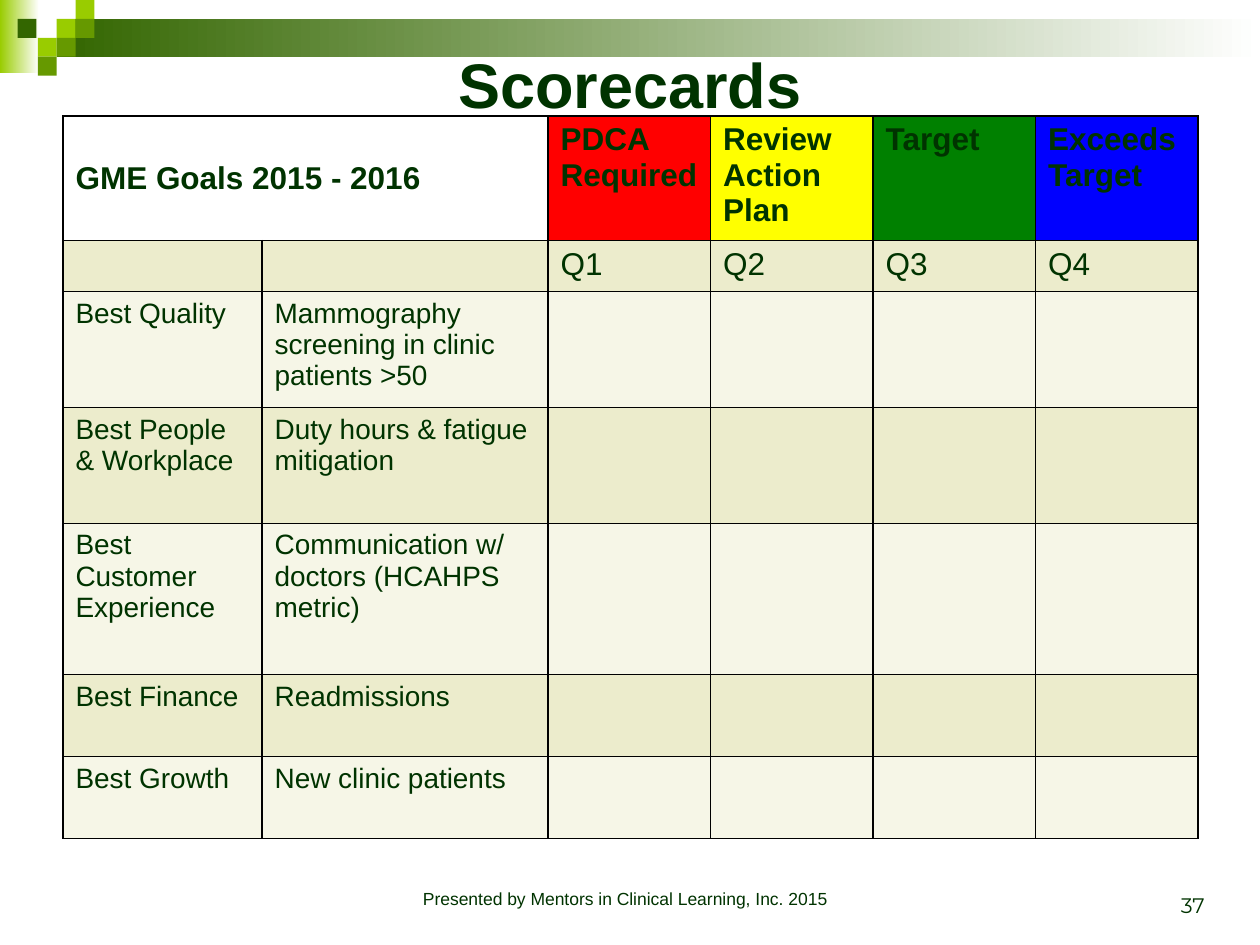
"""Build the goals scorecard slide."""
from dataclasses import dataclass

from lxml.etree import SubElement
from pptx import Presentation
from pptx.dml.color import RGBColor
from pptx.enum.shapes import MSO_SHAPE
from pptx.enum.text import MSO_ANCHOR, PP_ALIGN
from pptx.oxml.ns import qn
from pptx.util import Inches, Pt

COLORS = {
    "white": "FFFFFF", "black": "000000", "text": "003300",
    "lime": "99CC00", "leaf": "669900", "forest": "336600",
    "red": "FF0000", "yellow": "FFFF00", "green": "008000", "blue": "0000FF",
    "dark_band": "ECECCC", "light_band": "F6F6E7",
}
UNIT = 0.15
COLUMN_WIDTHS = [1.58, 2.27] + [1.29] * 4
ROW_HEIGHTS = [0.99, 0.37, 0.92, 0.92, 1.2, 0.65, 0.65]


@dataclass
class Block:
    column: float
    row: float
    width: float
    height: float
    color: str
    fades: bool = False


@dataclass
class TextStyle:
    size: int
    bold: bool = False
    font: str = "Arial"
    align: PP_ALIGN = PP_ALIGN.LEFT
    anchor: MSO_ANCHOR = MSO_ANCHOR.TOP


BLOCKS = [
    Block(0, 0, 2.07, 3.87, "lime", True),
    Block(3, 1, 63.67, 2, "forest", True),
    Block(3, 1, 1, 1, "lime"),
    Block(4, 0, 1, 1, "lime"),
    Block(4, 1, 1, 1, "leaf"),
    Block(2, 2, 1, 1, "lime"),
    Block(0.93, 1, 1, 1, "forest"),
    Block(3, 2, 1, 1, "leaf"),
    Block(2, 3, 1, 1, "leaf"),
]
RATINGS = [("PDCA Required", "red"), ("Review Action Plan", "yellow"),
           ("Target", "green"), ("Exceeds Target", "blue")]
GOALS = [
    ("Best Quality", "Mammography screening in clinic patients >50"),
    ("Best People & Workplace", "Duty hours & fatigue mitigation"),
    ("Best Customer Experience", "Communication w/ doctors (HCAHPS metric)"),
    ("Best Finance", "Readmissions"),
    ("Best Growth", "New clinic patients"),
]


def rgb(name: str) -> RGBColor:
    """Return a named color."""
    return RGBColor.from_string(COLORS[name])


def write(text_frame, text: str, style: TextStyle) -> None:
    """Add one styled run to the first paragraph."""
    paragraph = text_frame.paragraphs[0]
    paragraph.alignment = style.align
    run = paragraph.add_run()
    run.text = text
    run.font.name = style.font
    run.font.size = Pt(style.size)
    run.font.bold = style.bold
    run.font.color.rgb = rgb("text")


def draw_block(slide, block: Block) -> None:
    """Draw one rectangle of the corner mosaic."""
    box = [Inches(UNIT * share) for share in
           (block.column, block.row, block.width, block.height)]
    shape = slide.shapes.add_shape(MSO_SHAPE.RECTANGLE, *box)
    shape.shadow.inherit = False
    shape.line.fill.background()
    if block.fades:
        shape.fill.gradient()
        shape.fill.gradient_angle = 0
        for stop, color in zip(shape.fill.gradient_stops, (block.color, "white")):
            stop.color.rgb = rgb(color)
    else:
        shape.fill.solid()
        shape.fill.fore_color.rgb = rgb(block.color)


def add_borders(cell) -> None:
    """Give a cell thin black edges."""
    properties = cell._tc.get_or_add_tcPr()
    for index, edge in enumerate(("a:lnL", "a:lnR", "a:lnT", "a:lnB")):
        line = SubElement(properties, qn(edge), w=str(Pt(1)))
        fill = SubElement(line, qn("a:solidFill"))
        SubElement(fill, qn("a:srgbClr"), val=COLORS["black"])
        properties.insert(index, line)


def fill_cell(cell, text: str, color: str, style: TextStyle) -> None:
    """Color a cell and write its text."""
    cell.fill.solid()
    cell.fill.fore_color.rgb = rgb(color)
    cell.vertical_anchor = style.anchor
    if text:
        write(cell.text_frame, text, style)


def draw_scorecard(slide) -> None:
    """Draw the table of goals by quarter."""
    table = slide.shapes.add_table(
        len(ROW_HEIGHTS), len(COLUMN_WIDTHS), Inches(0.5), Inches(0.92),
        Inches(sum(COLUMN_WIDTHS)), Inches(sum(ROW_HEIGHTS))).table
    table.first_row = table.horz_banding = False
    for column, width in zip(table.columns, COLUMN_WIDTHS):
        column.width = Inches(width)
    for row, height in zip(table.rows, ROW_HEIGHTS):
        row.height = Inches(height)
    for cell in table.iter_cells():
        add_borders(cell)

    table.cell(0, 0).merge(table.cell(0, 1))
    fill_cell(table.cell(0, 0), "GME Goals 2015 - 2016", "white",
              TextStyle(18, True, anchor=MSO_ANCHOR.MIDDLE))
    for column, (rating, color) in enumerate(RATINGS, 2):
        fill_cell(table.cell(0, column), rating, color, TextStyle(18, True))

    quarters = ("", "", "Q1", "Q2", "Q3", "Q4")
    rows = [quarters] + [goal + ("",) * 4 for goal in GOALS]
    for row, texts in enumerate(rows, 1):
        style = TextStyle(18 if row == 1 else 16)
        band = "dark_band" if row % 2 else "light_band"
        for column, text in enumerate(texts):
            fill_cell(table.cell(row, column), text, band, style)


def add_text(slide, box: tuple, text: str, style: TextStyle) -> None:
    """Add a text box placed by shares of the slide width."""
    frame = slide.shapes.add_textbox(*[Inches(10 * share) for share in box]).text_frame
    frame.word_wrap = True
    frame.vertical_anchor = style.anchor
    write(frame, text, style)


def main() -> None:
    """Assemble and save the slide."""
    presentation = Presentation()
    presentation.slide_width, presentation.slide_height = Inches(10), Inches(7.5)
    slide = presentation.slides.add_slide(presentation.slide_layouts[5])
    for block in BLOCKS:
        draw_block(slide, block)

    title = slide.shapes.title
    title.left, title.top = Inches(0.5), Inches(0.04)
    title.width, title.height = Inches(9), Inches(1.25)
    title.text_frame.vertical_anchor = MSO_ANCHOR.MIDDLE
    write(title.text_frame, "Scorecards", TextStyle(36, True, align=PP_ALIGN.CENTER))

    draw_scorecard(slide)
    add_text(slide, (0.275, 0.7, 0.442, 0.033),
             "Presented by Mentors in Clinical Learning, Inc. 2015",
             TextStyle(10, align=PP_ALIGN.CENTER))
    add_text(slide, (0.733, 0.683, 0.233, 0.05), "37",
             TextStyle(12, font="Montserrat", align=PP_ALIGN.RIGHT,
                       anchor=MSO_ANCHOR.BOTTOM))
    presentation.save("out.pptx")


if __name__ == "__main__":
    main()
